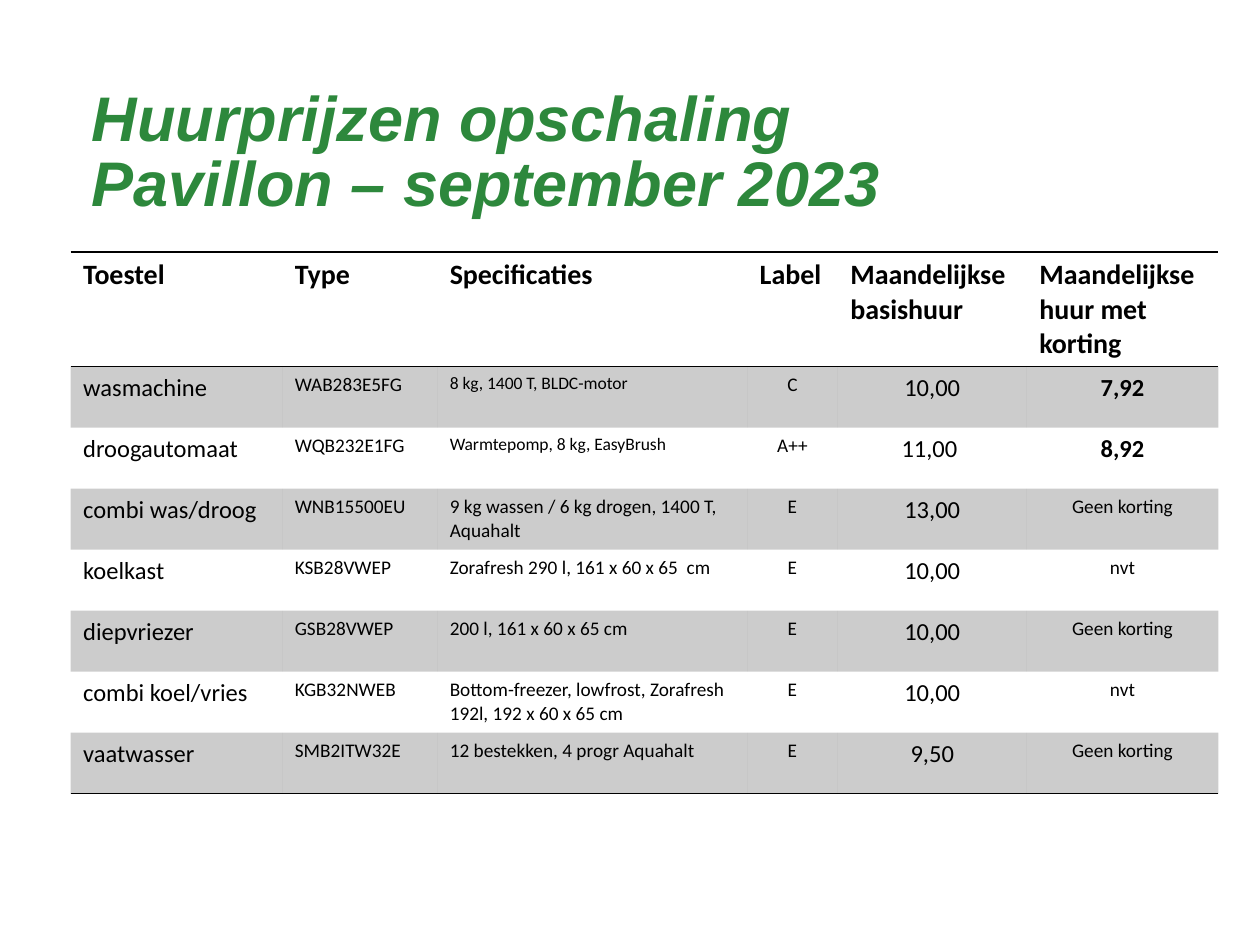
from dataclasses import dataclass

import pptx
import pptx.dml.color
import pptx.enum.text
import pptx.oxml
import pptx.oxml.ns
import pptx.util

Inches = pptx.util.Inches
Align = pptx.enum.text.PP_ALIGN
Anchor = pptx.enum.text.MSO_ANCHOR


@dataclass(frozen=True)
class Theme:
    title_font: str = "Arial"
    table_font: str = "Calibri"
    green: str = "2D883C"
    black: str = "000000"
    band_opacity: int = 20
    rule_width: float = 1
    title: int = 36
    header: int = 16
    body: int = 14
    detail: int = 11
    small: int = 10


THEME = Theme()
PLAIN_TABLE = "{2D5ABB26-0587-4C30-8999-92F81FD0307C}"  # no style, no grid

COLUMN_WIDTHS = [1.68, 1.23, 2.46, 0.72, 1.5, 1.52]
TABLE_HEIGHT, HEADER_HEIGHT = 4.3, 0.91
HEADERS = ["Toestel", "Type", "Specificaties", "Label",
           "Maandelijkse basishuur", "Maandelijkse huur met korting"]
APPLIANCES = [
    ["wasmachine", "WAB283E5FG", "8 kg, 1400 T, BLDC-motor", "C", "10,00", "7,92"],
    ["droogautomaat", "WQB232E1FG", "Warmtepomp, 8 kg, EasyBrush", "A++", "11,00 ", "8,92"],
    ["combi was/droog", "WNB15500EU", "9 kg wassen / 6 kg drogen, 1400 T, Aquahalt",
     "E", "13,00", "Geen korting"],
    ["koelkast", "KSB28VWEP", "Zorafresh 290 l, 161 x 60 x 65  cm", "E", "10,00", "nvt"],
    ["diepvriezer", "GSB28VWEP", "200 l, 161 x 60 x 65 cm", "E", "10,00", "Geen korting"],
    ["combi koel/vries", "KGB32NWEB",
     "Bottom-freezer, lowfrost, Zorafresh 192l, 192 x 60 x 65 cm", "E", "10,00", "nvt"],
    ["vaatwasser", "SMB2ITW32E", "12 bestekken, 4 progr Aquahalt", "E", "9,50", "Geen korting"],
]


def write_text(frame, text, *, font, size, color, bold=False, italic=False,
               align=Align.LEFT, line_spacing=None):
    para = frame.paragraphs[0]
    para.alignment = align
    para.line_spacing = line_spacing
    span = para.add_run()
    span.text = text
    span.font.name = font
    span.font.size = pptx.util.Pt(size)
    span.font.bold = bold
    span.font.italic = italic
    span.font.color.rgb = pptx.dml.color.RGBColor.from_string(color)


class PageBuilder:
    def __init__(self, page, theme):
        self.page = page
        self.theme = theme

    def title(self, text, left, top, width, height):
        box = self.page.shapes.add_textbox(*map(Inches, (left, top, width, height)))
        frame = box.text_frame
        frame.word_wrap = True
        frame.vertical_anchor = Anchor.MIDDLE
        frame.margin_left = frame.margin_right = frame.margin_top = 0
        frame.margin_bottom = Inches(0.06)
        write_text(frame, text, font=self.theme.title_font, size=self.theme.title,
                   color=self.theme.green, bold=True, italic=True, line_spacing=0.86)

    def rule(self, cell, side):
        width = pptx.util.Pt(self.theme.rule_width)
        cell._tc.get_or_add_tcPr().append(pptx.oxml.parse_xml(
            f'<a:{side} {pptx.oxml.ns.nsdecls("a")} w="{width}"><a:solidFill>'
            f'<a:srgbClr val="{self.theme.black}"/></a:solidFill></a:{side}>'))

    def band(self, cell):
        cell.fill.solid()
        cell.fill.fore_color.rgb = pptx.dml.color.RGBColor.from_string(self.theme.black)
        fill = cell._tc.tcPr.find(pptx.oxml.ns.qn("a:solidFill"))
        fill[0].append(pptx.oxml.parse_xml(
            f'<a:alpha {pptx.oxml.ns.nsdecls("a")} val="{self.theme.band_opacity * 1000}"/>'))

    def cell_format(self, row, column, text):
        if row == 0:
            return {"size": self.theme.header, "bold": True}
        is_price = column >= 4 and text[0].isdigit()
        if column == 0 or is_price:
            size = self.theme.body
        elif column == 2 and row <= 2:
            size = self.theme.small
        else:
            size = self.theme.detail
        return {"size": size, "bold": is_price and column == 5,
                "align": Align.CENTER if column >= 3 else Align.LEFT}

    def table(self, rows, left, top, widths, heights):
        table = self.page.shapes.add_table(
            len(rows), len(widths), Inches(left), Inches(top),
            Inches(sum(widths)), Inches(sum(heights))).table
        table.first_row = table.horz_banding = False
        table._tbl.tblPr.find(pptx.oxml.ns.qn("a:tableStyleId")).text = PLAIN_TABLE
        for column, width in zip(table.columns, widths):
            column.width = Inches(width)
        for row, height in zip(table.rows, heights):
            row.height = Inches(height)

        for r, texts in enumerate(rows):
            for c, text in enumerate(texts):
                cell = table.cell(r, c)
                write_text(cell.text_frame, text, font=self.theme.table_font,
                           color=self.theme.black, **self.cell_format(r, c, text))
                # Rules frame the header and close the table
                if r == 0:
                    self.rule(cell, "lnT")
                if r in (0, len(rows) - 1):
                    self.rule(cell, "lnB")
                # Every other row is shaded
                if r % 2:
                    self.band(cell)
                else:
                    cell.fill.background()


def main():
    deck = pptx.Presentation()
    deck.slide_width, deck.slide_height = Inches(10), Inches(7.5)
    builder = PageBuilder(deck.slides.add_slide(deck.slide_layouts[6]), THEME)

    # Heading
    builder.title("Huurprijzen opschaling Pavillon – september 2023 ", 0.73, 0.71, 6.77, 1.1)

    # Rental prices
    row_height = (TABLE_HEIGHT - HEADER_HEIGHT) / len(APPLIANCES)
    builder.table([HEADERS] + APPLIANCES, 0.56, 2, COLUMN_WIDTHS,
                  [HEADER_HEIGHT] + [row_height] * len(APPLIANCES))

    deck.save("out.pptx")


if __name__ == "__main__":
    main()
